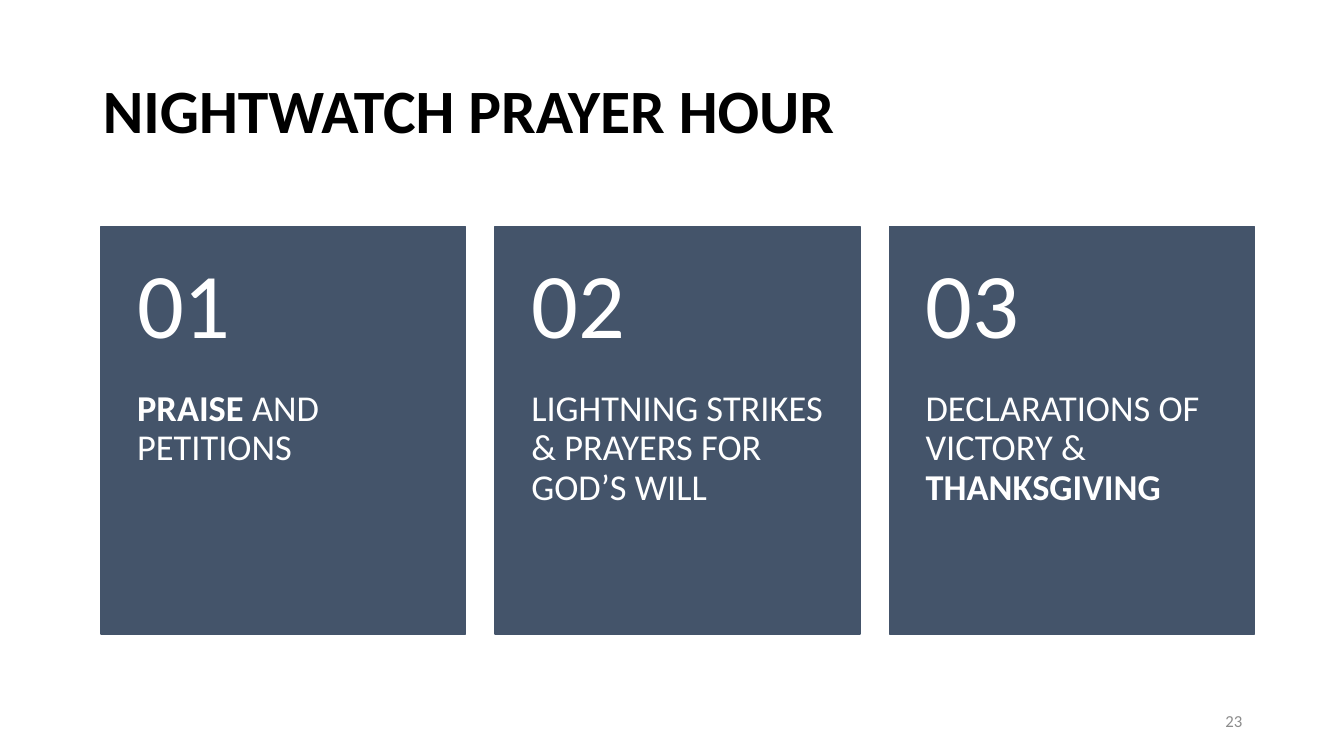
"""Build the Nightwatch Prayer Hour slide with three numbered cards."""
import pptx
import pptx.dml.color
import pptx.enum.shapes
import pptx.enum.text
import pptx.util

Inches = pptx.util.Inches
Pt = pptx.util.Pt
Align = pptx.enum.text.PP_ALIGN
Anchor = pptx.enum.text.MSO_ANCHOR


def color(hex_code):
    return pptx.dml.color.RGBColor.from_string(hex_code)


class PrayerSlide:
    font_name = "Calibri"
    slate = "44546A"
    white = "FFFFFF"

    def __init__(self, deck):
        self.slide = deck.slides.add_slide(deck.slide_layouts[5])

    def fill_text(self, frame, runs, size, ink, anchor, align=Align.LEFT,
                  spacing=0.9, after=0, insets=(0.1, 0.05, 0.1, 0.05)):
        frame.word_wrap = True
        frame.auto_size = pptx.enum.text.MSO_AUTO_SIZE.NONE
        frame.vertical_anchor = anchor
        (frame.margin_left, frame.margin_top,
         frame.margin_right, frame.margin_bottom) = map(Inches, insets)
        line = frame.paragraphs[0]
        line.alignment = align
        line.line_spacing = spacing
        line.space_after = Pt(after)
        for words, bold in runs:
            run = line.add_run()
            run.text = words
            run.font.name = self.font_name
            run.font.size = Pt(size)
            run.font.bold = bold
            run.font.color.rgb = color(ink)

    def title(self, words, left, top, width, height):
        heading = self.slide.shapes.title
        heading.left, heading.top = Inches(left), Inches(top)
        heading.width, heading.height = Inches(width), Inches(height)
        self.fill_text(heading.text_frame, [(words, True)], 44, "000000", Anchor.MIDDLE)

    def text(self, box, runs, size, ink, anchor, **style):
        label = self.slide.shapes.add_textbox(*map(Inches, box))
        self.fill_text(label.text_frame, runs, size, ink, anchor, **style)

    def panel(self, box):
        panel = self.slide.shapes.add_shape(
            pptx.enum.shapes.MSO_SHAPE.RECTANGLE, *map(Inches, box))
        panel.shadow.inherit = False
        panel.fill.solid()
        panel.fill.fore_color.rgb = color(self.slate)
        panel.line.color.rgb = color(self.slate)
        panel.line.width = Pt(1)

    def card(self, number, theme, left, top, width, height):
        number_height = 1.62
        self.panel((left, top, width, height))
        self.text((left, top + number_height, width, height - number_height),
                  theme, 26, self.white, Anchor.TOP, after=9,
                  insets=(0.36, 0, 0.36, 0.36))
        self.text((left, top, width, number_height), [(f"{number:02d}", False)],
                  66, self.white, Anchor.MIDDLE, after=23,
                  insets=(0.36, 0.18, 0.36, 0.18))


def main():
    deck = pptx.Presentation()
    deck.slide_width, deck.slide_height = Inches(13.33), Inches(7.5)
    page = PrayerSlide(deck)
    page.title("NIGHTWATCH PRAYER HOUR", 0.92, 0.4, 11.5, 1.45)

    themes = [
        [("PRAISE", True), (" AND PETITIONS", False)],
        [("LIGHTNING STRIKES & PRAYERS FOR GOD’S WILL", False)],
        [("DECLARATIONS OF VICTORY & ", False), ("THANKSGIVING", True)],
    ]
    first_left, pitch = 1, 3.91
    for index, theme in enumerate(themes):
        page.card(index + 1, theme, first_left + index * pitch, 2.25, 3.62, 4.04)

    page.text((9.42, 6.95, 3, 0.4), [("23", False)], 12, "8C8C8C",
              Anchor.MIDDLE, align=Align.RIGHT, spacing=1.0)
    deck.save("out.pptx")


if __name__ == "__main__":
    main()
